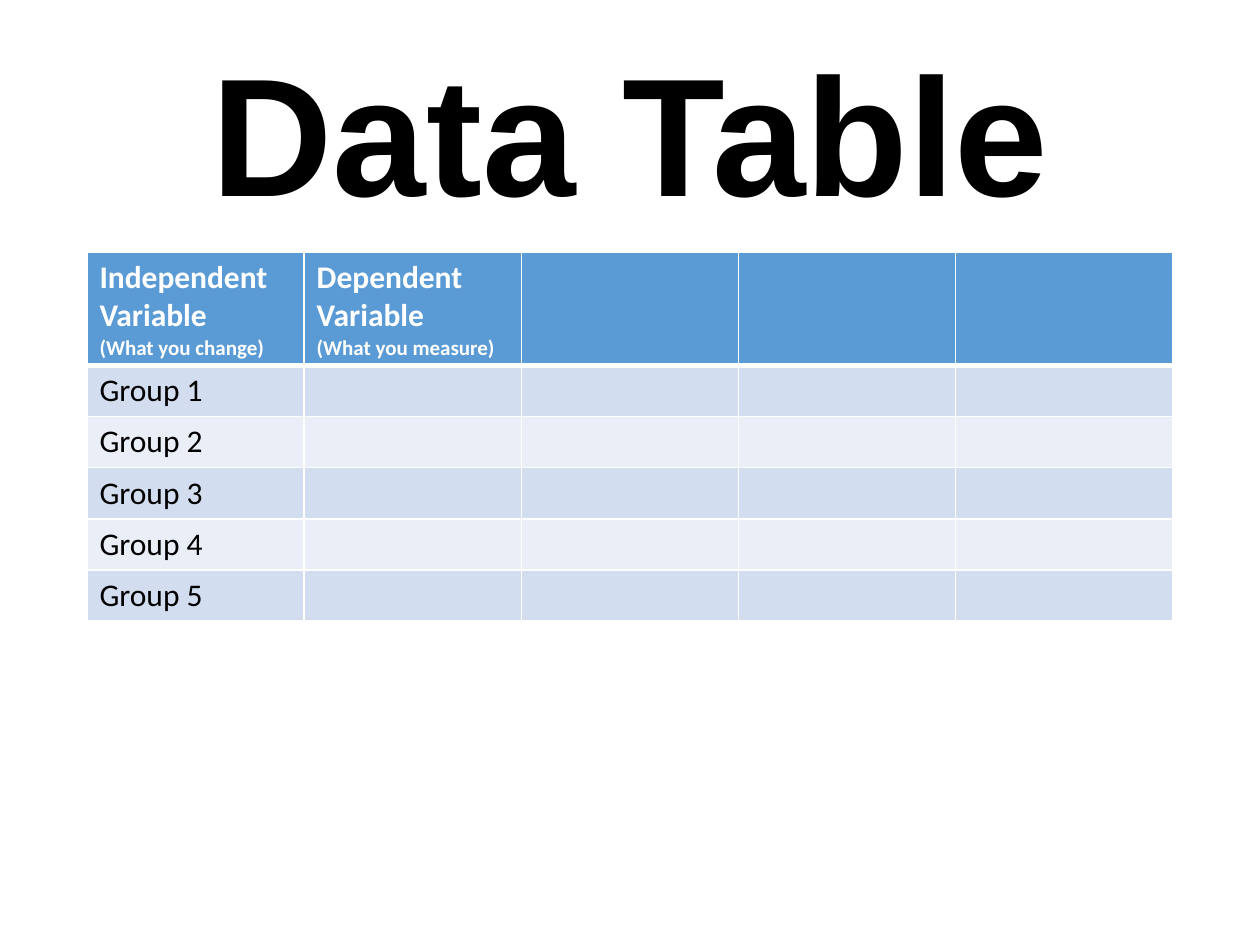
from lxml.etree import SubElement
from pptx import Presentation
from pptx.dml.color import RGBColor
from pptx.enum.text import MSO_ANCHOR, PP_ALIGN
from pptx.oxml.ns import qn
from pptx.util import Inches, Pt

WIDTH, HEIGHT = 10, 7.5
MARGIN = 0.69
CONTENT_WIDTH = WIDTH - 2 * MARGIN
COLUMNS, GROUPS = 5, 5
HEADER_HEIGHT, TABLE_HEIGHT = 0.9, 2.93
HEADINGS = [
    ("Independent Variable", "(What you change)"),
    ("Dependent Variable", "(What you measure)"),
]
WHITE, BLACK = "FFFFFF", "000000"
HEADER_FILL, BAND_FILLS = "5B9BD5", ("D2DEEF", "EAEFF7")


def color(value):
    return RGBColor.from_string(value)


def write(paragraph, text, size=18, font="Calibri", ink=BLACK, bold=False,
          align=PP_ALIGN.LEFT, spacing=None):
    paragraph.alignment = align
    paragraph.line_spacing = spacing
    run = paragraph.add_run()
    run.text = text
    run.font.size = Pt(size)
    run.font.name = font
    run.font.bold = bold
    run.font.color.rgb = color(ink)


def add_title(slide, text):
    title = slide.shapes.add_textbox(
        Inches(MARGIN), Inches(0.4), Inches(CONTENT_WIDTH), Inches(1.45))
    frame = title.text_frame
    frame.word_wrap = True
    frame.vertical_anchor = MSO_ANCHOR.MIDDLE
    write(frame.paragraphs[0], text, size=96, font="Arial", bold=True,
          align=PP_ALIGN.CENTER, spacing=0.9)


def style_cell(cell, fill, top=1, bottom=1):
    properties = cell._tc.get_or_add_tcPr()
    for side, points in (("L", 1), ("R", 1), ("T", top), ("B", bottom)):
        border = SubElement(properties, qn(f"a:ln{side}"), w=str(Pt(points)))
        border_fill = SubElement(border, qn("a:solidFill"))
        SubElement(border_fill, qn("a:srgbClr"), val=WHITE)
    cell.fill.solid()
    cell.fill.fore_color.rgb = color(fill)


def add_data_table(slide):
    table = slide.shapes.add_table(
        GROUPS + 1, COLUMNS, Inches(MARGIN), Inches(2),
        Inches(CONTENT_WIDTH), Inches(TABLE_HEIGHT)).table
    table.rows[0].height = Inches(HEADER_HEIGHT)
    for cell in table.rows[0].cells:
        style_cell(cell, HEADER_FILL, bottom=3)
    for column, (variable, hint) in enumerate(HEADINGS):
        frame = table.cell(0, column).text_frame
        write(frame.paragraphs[0], variable, ink=WHITE, bold=True)
        write(frame.add_paragraph(), hint, size=12, ink=WHITE, bold=True)

    for group in range(1, GROUPS + 1):
        row = table.rows[group]
        row.height = Inches((TABLE_HEIGHT - HEADER_HEIGHT) / GROUPS)
        for cell in row.cells:
            style_cell(cell, BAND_FILLS[(group - 1) % 2], top=3 if group == 1 else 1)
        write(row.cells[0].text_frame.paragraphs[0], f"Group {group}")


def main():
    presentation = Presentation()
    presentation.slide_width = Inches(WIDTH)
    presentation.slide_height = Inches(HEIGHT)
    slide = presentation.slides.add_slide(presentation.slide_layouts[6])
    add_title(slide, "Data Table")
    add_data_table(slide)
    presentation.save("out.pptx")


if __name__ == "__main__":
    main()
